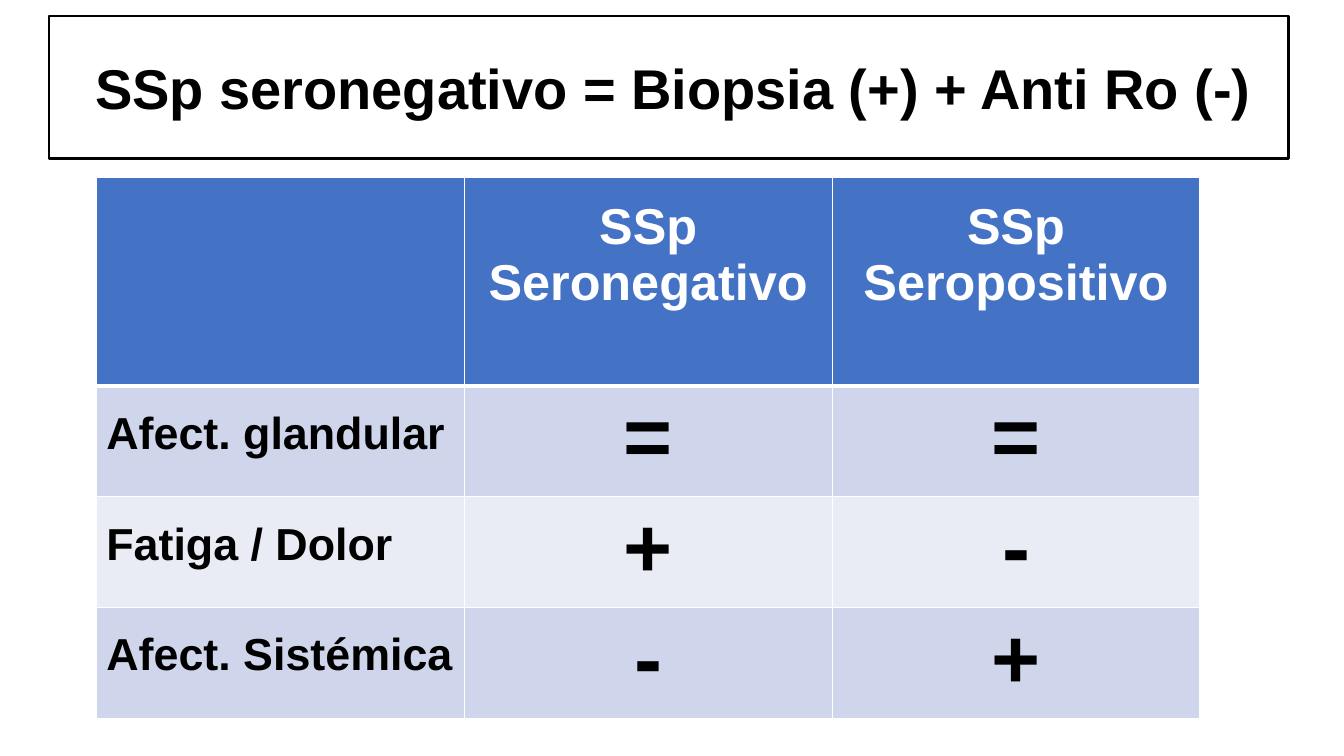
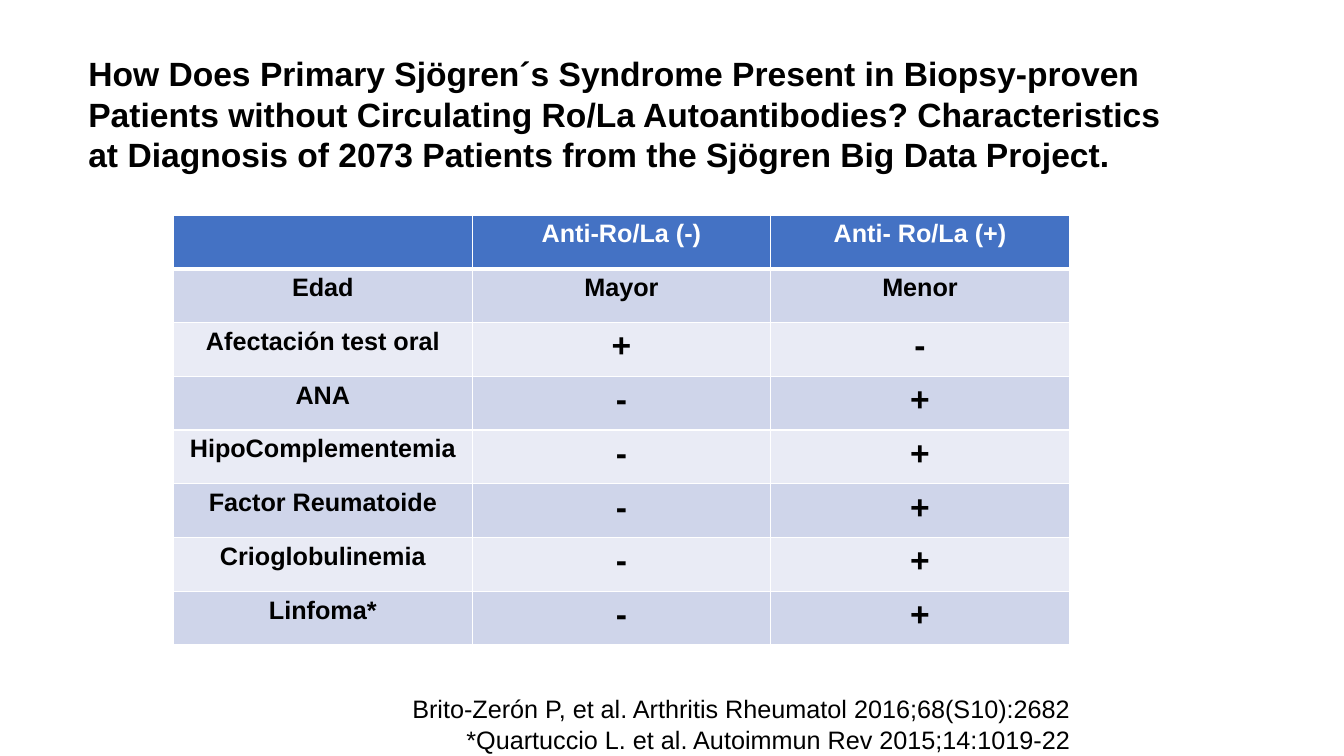
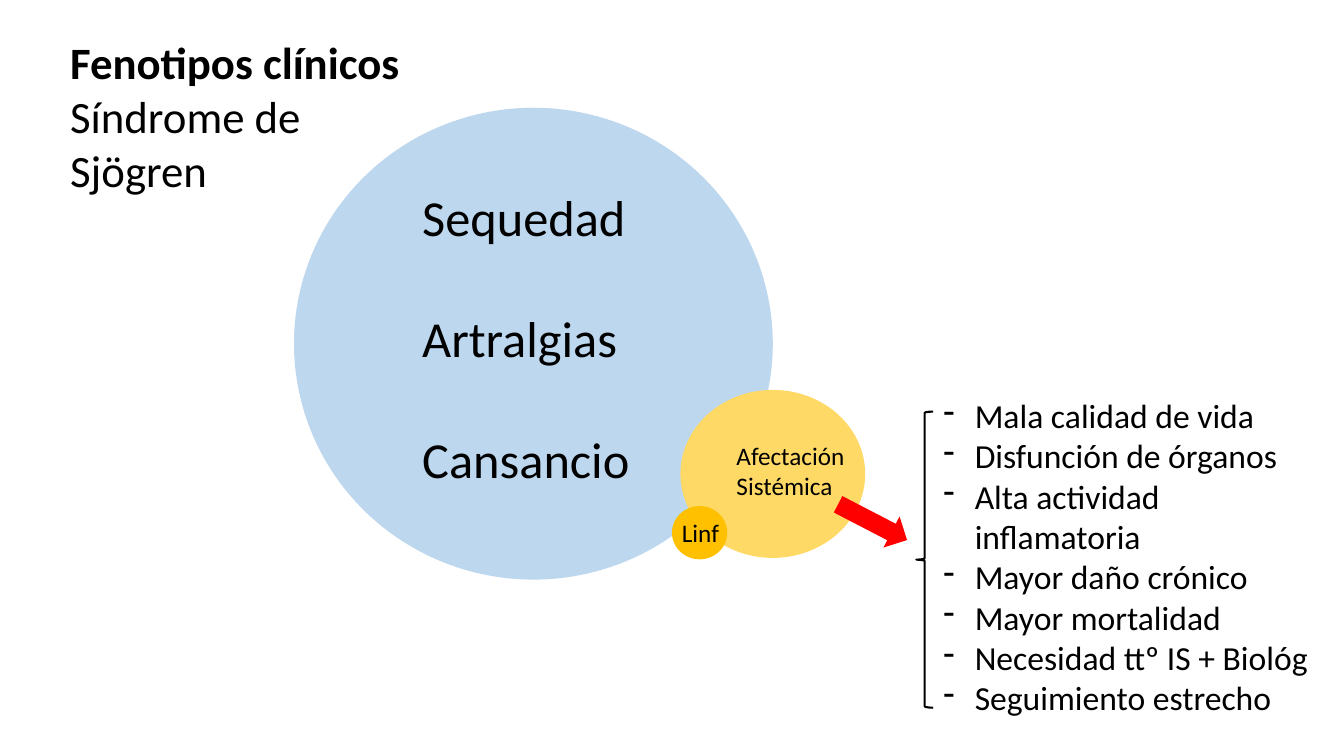
import lxml.etree
import pptx
import pptx.dml.color
import pptx.enum.shapes
import pptx.enum.text
import pptx.oxml.ns
import pptx.util

Pt = pptx.util.Pt
SHAPES = pptx.enum.shapes.MSO_SHAPE
ALIGN = pptx.enum.text.PP_ALIGN
BLACK, WHITE, RED = "000000", "FFFFFF", "FF0000"
HEADER, BANDS = "4472C4", ("CFD5EA", "E9EBF5")
PALE_BLUE, YELLOW, AMBER = "BDD7EE", "FFD966", "FFC000"


def color(value):
    return pptx.dml.color.RGBColor.from_string(value)


def add_xml(parent, tag, **attributes):
    element = lxml.etree.SubElement(parent, pptx.oxml.ns.qn(tag))
    for name, value in attributes.items():
        element.set(name, str(value))
    return element


class Deck:
    """Holds the presentation, its style and the current slide."""

    def __init__(self, width, height):
        self.presentation = pptx.Presentation()
        self.presentation.slide_width = Pt(width)
        self.presentation.slide_height = Pt(height)
        self.font = "Arial"
        self.slide = None

    def new_slide(self, font):
        self.font = font
        self.slide = self.presentation.slides.add_slide(self.presentation.slide_layouts[6])

    def add_run(self, paragraph, text, size, bold=False, ink=BLACK, align=ALIGN.LEFT):
        paragraph.alignment = align
        run = paragraph.add_run()
        run.text = text
        run.font.name = self.font
        run.font.size = Pt(size)
        run.font.bold = bold
        run.font.color.rgb = color(ink)

    def text(self, box, lines, size, bold_lines=0, align=ALIGN.LEFT, gap=0, bullet=None):
        frame = self.slide.shapes.add_textbox(*map(Pt, box)).text_frame
        frame.word_wrap = True
        for index, line in enumerate(lines):
            paragraph = frame.add_paragraph() if index else frame.paragraphs[0]
            self.add_run(paragraph, line, size, index < bold_lines, align=align)
            if index and gap:
                paragraph.space_before = Pt(gap)
            if bullet:
                self.bullet(paragraph, bullet)

    def bullet(self, paragraph, character, indent=22.5):
        properties = paragraph._p.get_or_add_pPr()
        properties.set("marL", str(Pt(indent)))
        properties.set("indent", str(-Pt(indent)))
        add_xml(properties, "a:buFontTx")
        add_xml(properties, "a:buChar", char=character)

    def shape(self, kind, box, fill=None, line=None, line_width=1, rotation=0, adjustments=()):
        shape = self.slide.shapes.add_shape(kind, *map(Pt, box))
        shape.shadow.inherit = False
        shape.rotation = rotation
        for index, value in enumerate(adjustments):
            shape.adjustments[index] = value
        if fill:
            shape.fill.solid()
            shape.fill.fore_color.rgb = color(fill)
        else:
            shape.fill.background()
        if line:
            shape.line.color.rgb = color(line)
            shape.line.width = Pt(line_width)
        else:
            shape.line.fill.background()

    def table(self, left, top, column_width, row_heights, rows, label_size, mark_size,
              header_size, label_align, header_top=3.6, label_top=3.6):
        columns = len(rows[0])
        table = self.slide.shapes.add_table(
            len(rows), columns, Pt(left), Pt(top),
            Pt(column_width * columns), Pt(sum(row_heights))).table
        for column in table.columns:
            column.width = Pt(column_width)
        for row_index, row in enumerate(rows):
            table.rows[row_index].height = Pt(row_heights[row_index])
            is_header = row_index == 0
            for column_index, text in enumerate(row):
                cell = table.cell(row_index, column_index)
                is_label = column_index == 0
                self.borders(cell, 3 if row_index == 1 else 1, 3 if is_header else 1)
                cell.fill.solid()
                cell.fill.fore_color.rgb = color(HEADER if is_header else BANDS[(row_index - 1) % 2])
                if is_header:
                    cell.margin_top = Pt(header_top)
                elif is_label:
                    cell.margin_top = Pt(label_top)
                if text:
                    size = header_size if is_header else mark_size if len(text) == 1 else label_size
                    align = label_align if is_label else ALIGN.CENTER
                    self.add_run(cell.text_frame.paragraphs[0], text, size, True,
                                 WHITE if is_header else BLACK, align)

    def borders(self, cell, top, bottom):
        properties = cell._tc.get_or_add_tcPr()
        for side, width in (("L", 1), ("R", 1), ("T", top), ("B", bottom)):
            line = add_xml(properties, f"a:ln{side}", w=Pt(width))
            add_xml(add_xml(line, "a:solidFill"), "a:srgbClr", val=WHITE)


def seronegative_slide(deck):
    deck.new_slide("Arial")
    deck.text((61, 34.5, 850, 55.5), ["SSp seronegativo = Biopsia (+) + Anti Ro (-)"], 40, bold_lines=1)
    deck.shape(SHAPES.RECTANGLE, (35, 11.5, 885.5, 102), line=BLACK, line_width=2)
    rows = [
        ("", "SSp Seronegativo", "SSp Seropositivo"),
        ("Afect. glandular", "=", "="),
        ("Fatiga / Dolor", "+", "-"),
        ("Afect. Sistémica", "-", "+"),
    ]
    deck.table(68.8, 127, 262.8, [148.5] + [79.2] * 3, rows, label_size=32, mark_size=60,
               header_size=36, label_align=ALIGN.LEFT, header_top=15, label_top=16.3)


def study_slide(deck):
    deck.new_slide("Arial")
    deck.text((56, 34.5, 795.5, 94.5), [
        "How Does Primary Sjögren´s Syndrome Present in Biopsy-proven Patients without "
        "Circulating Ro/La Autoantibodies? Characteristics at Diagnosis of 2073 Patients "
        "from the Sjögren Big Data Project."], 24, bold_lines=1)
    findings = ["ANA", "HipoComplementemia", "Factor Reumatoide", "Crioglobulinemia", "Linfoma*"]
    rows = [
        ("", "Anti-Ro/La (-)", "Anti- Ro/La (+)"),
        ("Edad", "Mayor", "Menor"),
        ("Afectación test oral", "+", "-"),
    ] + [(finding, "-", "+") for finding in findings]
    deck.table(124, 153.6, 213.3, [38.4] * len(rows), rows, label_size=18, mark_size=24,
               header_size=18, label_align=ALIGN.CENTER)
    deck.text((63, 492, 708.5, 48), [
        "Brito-Zerón P, et al. Arthritis Rheumatol 2016;68(S10):2682",
        "*Quartuccio L. et al. Autoimmun Rev 2015;14:1019-22"], 18, align=ALIGN.RIGHT)


def phenotypes_slide(deck):
    deck.new_slide("Calibri")
    for box, fill in (
        ((210, 77, 342, 337), PALE_BLUE),
        ((486, 278.5, 132, 120), YELLOW),
        ((480, 361.5, 39.5, 38), AMBER),
    ):
        deck.shape(SHAPES.OVAL, box, fill)
    deck.text((294.5, 129.5, 184, 223), ["Sequedad", "Artralgias", "Cansancio"], 36, gap=43)
    deck.text((519, 311, 100, 50.5), ["Afectación", "Sistémica"], 18)
    deck.text((480, 366, 51, 29), ["Linf"], 18)
    deck.text((43, 21.5, 528, 122.5), ["Fenotipos clínicos", "Síndrome de", "Sjögren"], 32, bold_lines=1)
    deck.text((666.7, 278.6, 280, 237.5), [
        "Mala calidad de vida",
        "Disfunción de órganos",
        "Alta actividad inflamatoria",
        "Mayor daño crónico",
        "Mayor mortalidad",
        "Necesidad ttº IS + Biológ",
        "Seguimiento estrecho"], 24, bullet="-")
    deck.shape(SHAPES.LEFT_BRACE, (654.5, 294, 12, 211.5), line=BLACK, line_width=1.5,
               adjustments=(0.08, 0.5))
    deck.shape(SHAPES.RIGHT_ARROW, (595.5, 360.5, 55.5, 25), RED, rotation=27.4,
               adjustments=(0.53, 0.5))


def main():
    deck = Deck(960, 540)
    seronegative_slide(deck)
    study_slide(deck)
    phenotypes_slide(deck)
    deck.presentation.save("out.pptx")


if __name__ == "__main__":
    main()
